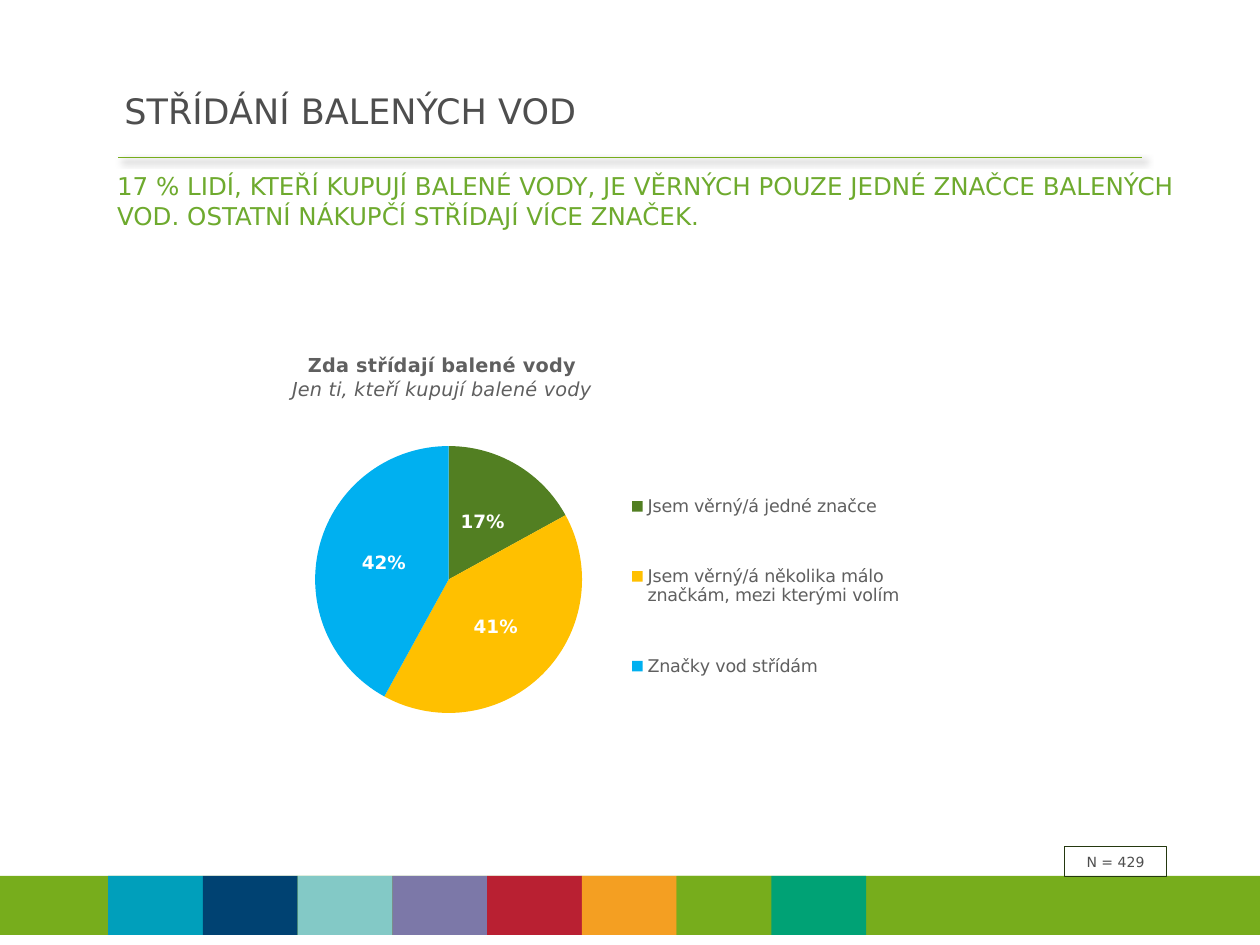
import pptx
import pptx.chart.data
import pptx.dml.color
import pptx.enum.chart
import pptx.enum.shapes
import pptx.enum.text
import pptx.oxml
import pptx.oxml.ns
import pptx.util
from pptx.util import Cm

FONT = "DejaVu Sans"
COLORS = {
    "green": "77AD1C", "heading": "4E4E4E", "message": "6EAA2E",
    "chart_text": "5F5F5F", "white": "FFFFFF", "border": "24380F",
}
TILES = ["009FBB", "004272", "83C9C6", "7C78A8",
         "B92032", "F49F22", "77AD1C", "00A275"]
ANSWERS = [
    ("Jsem věrný/á jedné značce", 0.17, "527F22"),
    ("Jsem věrný/á několika málo značkám, mezi kterými volím", 0.41, "FFC000"),
    ("Značky vod střídám", 0.42, "00B0F0"),
]


def rgb(hex_color):
    return pptx.dml.color.RGBColor.from_string(hex_color)


def style_font(font, size, color, bold=False, italic=False):
    font.name = FONT
    font.size = pptx.util.Pt(size)
    font.color.rgb = rgb(color)
    font.bold = bold
    font.italic = italic


def add_text(s, text, box, size, color, anchor):
    tf = s.shapes.add_textbox(*box).text_frame
    tf.word_wrap = True
    tf.vertical_anchor = anchor
    tf.text = text
    style_font(tf.paragraphs[0].runs[0].font, size, color)


def add_rect(s, box, fill=None, line=None):
    sp = s.shapes.add_shape(pptx.enum.shapes.MSO_SHAPE.RECTANGLE, *box)
    sp.shadow.inherit = False
    if fill:
        sp.fill.solid()
        sp.fill.fore_color.rgb = rgb(fill)
    else:
        sp.fill.background()
    if line:
        sp.line.color.rgb = rgb(line)
        sp.line.width = pptx.util.Pt(0.75)
    else:
        sp.line.fill.background()
    return sp


def add_rule(s):
    line = s.shapes.add_connector(pptx.enum.shapes.MSO_CONNECTOR.STRAIGHT,
                                  Cm(2.38), Cm(3.17), Cm(23.02), Cm(3.17))
    line.line.color.rgb = rgb(COLORS["green"])
    line.line.width = pptx.util.Pt(0.75)
    # Soft shadow: 4 pt blur, 3 pt away at 45 degrees, 40 % black
    line._element.spPr.append(pptx.oxml.parse_xml(
        f'<a:effectLst {pptx.oxml.ns.nsdecls("a")}>'
        '<a:outerShdw blurRad="50800" dist="38100" dir="2700000" rotWithShape="0">'
        '<a:srgbClr val="000000"><a:alpha val="40000"/></a:srgbClr>'
        '</a:outerShdw></a:effectLst>'))


def place(element, index, inner=False, **fractions):
    """Give a chart part a manual layout in fractions of the chart."""
    for old in element.findall(pptx.oxml.ns.qn("c:layout")):
        element.remove(old)
    target = '<c:layoutTarget val="inner"/>' if inner else ""
    modes = "".join(f'<c:{k}Mode val="edge"/>' for k in "xy")
    values = "".join(f'<c:{k} val="{v}"/>' for k, v in fractions.items())
    element.insert(index, pptx.oxml.parse_xml(
        f'<c:layout {pptx.oxml.ns.nsdecls("c")}><c:manualLayout>'
        f'{target}{modes}{values}</c:manualLayout></c:layout>'))


def add_pie(s):
    data = pptx.chart.data.CategoryChartData(number_format="0%")
    data.categories = [name for name, _, _ in ANSWERS]
    data.add_series("Series 1", [value for _, value, _ in ANSWERS])
    chart = s.shapes.add_chart(pptx.enum.chart.XL_CHART_TYPE.PIE, Cm(3.5), Cm(6.93),
                               Cm(15.4), Cm(8.97), data).chart
    style_font(chart.font, 18, COLORS["chart_text"])

    # Title
    tf = chart.chart_title.text_frame
    tf.text = "Zda střídají balené vody\nJen ti, kteří kupují balené vody"
    for i, p in enumerate(tf.paragraphs):
        style_font(p.runs[0].font, 11, COLORS["chart_text"], bold=i == 0, italic=i == 1)
    place(chart.chart_title._element, 1, x=0.15, y=0.01)

    # Legend
    chart.has_legend = True
    chart.legend.position = pptx.enum.chart.XL_LEGEND_POSITION.LEFT
    chart.legend.include_in_layout = False
    style_font(chart.legend.font, 10, COLORS["chart_text"])
    place(chart.legend._element, 1, x=0.58, y=0.23, w=0.39, h=0.63)

    # Slices and labels
    plot = chart.plots[0]
    plot.vary_by_categories = True
    for i, (_, _, color) in enumerate(ANSWERS):
        fill = plot.series[0].points[i].format.fill
        fill.solid()
        fill.fore_color.rgb = rgb(color)
    plot.has_data_labels = True
    labels = plot.data_labels
    labels.show_value = True
    labels.show_percentage = False
    labels.number_format = "0%"
    labels.number_format_is_linked = False
    labels.position = pptx.enum.chart.XL_LABEL_POSITION.CENTER
    style_font(labels.font, 10.5, COLORS["white"], bold=True)
    plot_area = chart._chartSpace.chart.plotArea
    place(plot_area, 0, inner=True, x=0.18, y=0.23, w=0.36, h=0.6)


def add_sample_size(s):
    sp = add_rect(s, (Cm(21.46), Cm(17.07), Cm(2.06), Cm(0.6)), line=COLORS["border"])
    tf = sp.text_frame
    tf.margin_top = tf.margin_bottom = 0
    tf.vertical_anchor = pptx.enum.text.MSO_ANCHOR.MIDDLE
    tf.text = "N = 429"
    p = tf.paragraphs[0]
    p.alignment = pptx.enum.text.PP_ALIGN.CENTER
    style_font(p.runs[0].font, 8, COLORS["heading"])


def main():
    prs = pptx.Presentation()
    prs.slide_width, prs.slide_height = Cm(25.4), Cm(19.05)
    s = prs.slides.add_slide(prs.slide_layouts[6])

    # Rule and colour strip
    add_rule(s)
    top, height, tile = 17.66, 1.19, 1.91
    add_rect(s, (0, Cm(top), prs.slide_width, Cm(height)), COLORS["green"])
    for i, color in enumerate(TILES):
        add_rect(s, (Cm(2.18 + i * tile), Cm(top), Cm(tile), Cm(height)), color)

    # Heading and message
    anchor = pptx.enum.text.MSO_ANCHOR
    add_text(s, "STŘÍDÁNÍ BALENÝCH VOD", (Cm(2.26), Cm(1.57), Cm(22.53), Cm(1.3)),
             20, COLORS["heading"], anchor.MIDDLE)
    add_text(s, "17 % LIDÍ, KTEŘÍ KUPUJÍ BALENÉ VODY, JE VĚRNÝCH POUZE JEDNÉ ZNAČCE "
             "BALENÝCH VOD. OSTATNÍ NÁKUPČÍ STŘÍDAJÍ VÍCE ZNAČEK.",
             (Cm(2.11), Cm(3.33), Cm(22.4), Cm(2.03)), 14, COLORS["message"], anchor.TOP)

    # Chart and sample size
    add_pie(s)
    add_sample_size(s)
    prs.save("out.pptx")


if __name__ == "__main__":
    main()
